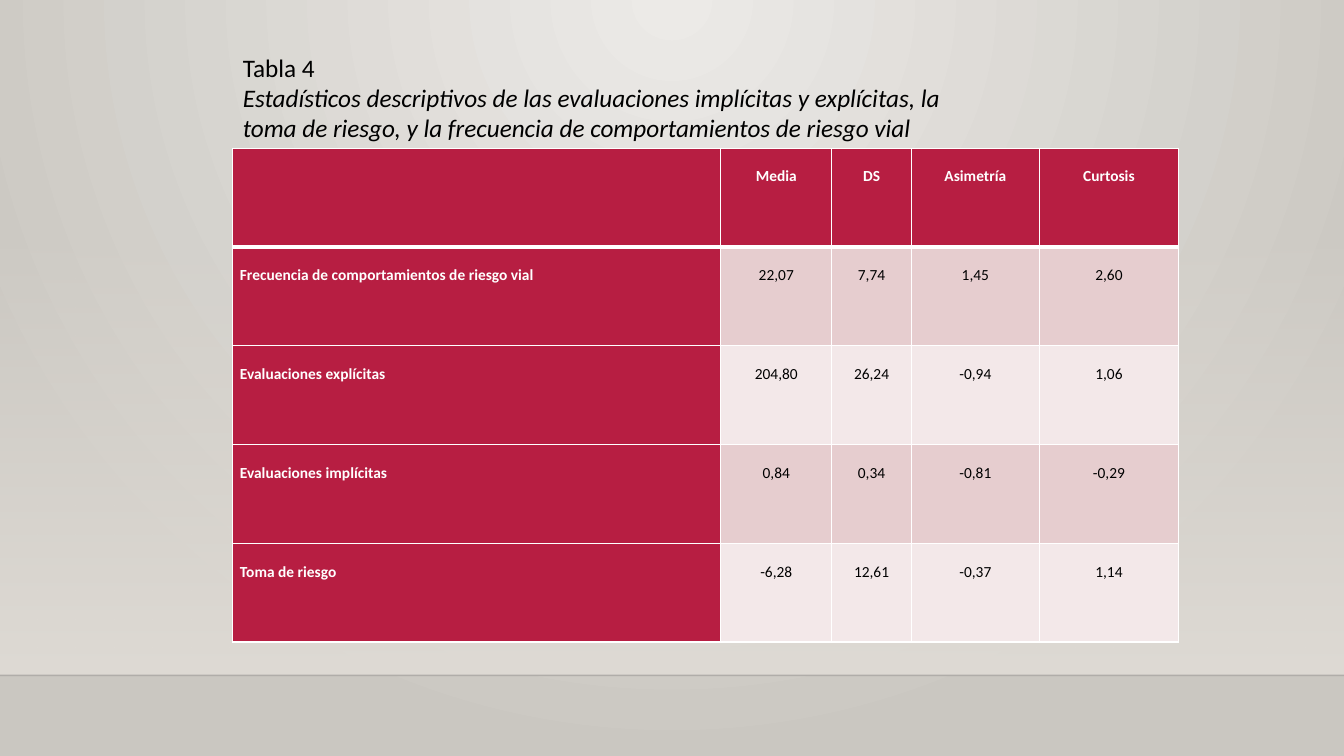
from typing import NamedTuple

from lxml import etree
from pptx import Presentation
from pptx.dml.color import RGBColor
from pptx.enum.shapes import MSO_CONNECTOR, MSO_SHAPE
from pptx.enum.text import MSO_ANCHOR, MSO_AUTO_SIZE, PP_ALIGN
from pptx.oxml.ns import qn
from pptx.util import Inches, Pt

CENTER, LEFT = PP_ALIGN.CENTER, PP_ALIGN.LEFT
MIDDLE = MSO_ANCHOR.MIDDLE
GROW = MSO_AUTO_SIZE.SHAPE_TO_FIT_TEXT
RECTANGLE = MSO_SHAPE.RECTANGLE
STRAIGHT = MSO_CONNECTOR.STRAIGHT

FONT = "Calibri"
CRIMSON, WHITE, BLACK = "B71E42", "FFFFFF", "000000"
BANDS = ("E6CDCF", "F3E8E9")
SLIDE_WIDTH, SLIDE_HEIGHT = 13.33, 7.5
FLOOR_TOP, WALL_TOP = 6.7, 2.21
COLUMN_WIDTHS = (4.84, 1.1, 0.79, 1.27, 1.38)
ROW_HEIGHT = 0.98
TITLE = "Tabla 4"
SUBTITLE = (
    "Estadísticos descriptivos de las evaluaciones implícitas y explícitas, "
    "la toma de riesgo, y la frecuencia de comportamientos de riesgo vial"
)


class Measure(NamedTuple):
    label: str
    mean: str
    deviation: str
    skewness: str
    kurtosis: str


ROWS = (
    Measure("", "Media", "DS", "Asimetría", "Curtosis"),
    Measure("Frecuencia de comportamientos de riesgo vial", "22,07", "7,74", "1,45", "2,60"),
    Measure("Evaluaciones explícitas", "204,80", "26,24", "-0,94", "1,06"),
    Measure("Evaluaciones implícitas", "0,84", "0,34", "-0,81", "-0,29"),
    Measure("Toma de riesgo", "-6,28", "12,61", "-0,37", "1,14"),
)


def color(value: str) -> RGBColor:
    return RGBColor.from_string(value)


def set_gradient(fill, start: str, end: str) -> None:
    fill.gradient()
    for stop, value in zip(fill.gradient_stops, (start, end)):
        stop.color.rgb = color(value)


def set_alpha(color_element, percent: int) -> None:
    etree.SubElement(color_element, qn("a:alpha"), val=str(percent * 1000))


def paint_background(page) -> None:
    set_gradient(page.background.fill, "ECEAE7", "CAC7C1")
    gradient = next(page.element.iter(qn("a:gradFill")))
    gradient.remove(gradient.find(qn("a:lin")))
    circle = etree.SubElement(gradient, qn("a:path"), path="circle")
    etree.SubElement(circle, qn("a:fillToRect"), l="43000", t="0", r="43000", b="100000")


def add_wall(page) -> None:
    """Draw the fading wall and the thin line where it meets the floor."""
    wall = page.shapes.add_shape(
        RECTANGLE, 0, Inches(WALL_TOP), Inches(SLIDE_WIDTH), Inches(FLOOR_TOP - WALL_TOP)
    )
    wall.shadow.inherit = False
    wall.line.fill.background()
    set_gradient(wall.fill, "DFDBD5", "DFDBD5")
    wall.fill.gradient_angle = 270
    set_alpha(next(wall.element.spPr.iter(qn("a:srgbClr"))), 0)

    edge = page.shapes.add_connector(
        STRAIGHT, 0, Inches(FLOOR_TOP), Inches(SLIDE_WIDTH), Inches(FLOOR_TOP)
    )
    edge.line.width = Pt(1)
    edge.line.color.rgb = color("000001")
    properties = edge.element.spPr
    set_alpha(next(properties.iter(qn("a:srgbClr"))), 20)
    etree.SubElement(properties, qn("a:effectLst"))


def set_borders(cell, top: float, bottom: float) -> None:
    """Put white borders before the cell fill, as the schema orders them."""
    properties = cell._tc.get_or_add_tcPr()
    widths = {"a:lnL": 1, "a:lnR": 1, "a:lnT": top, "a:lnB": bottom}
    for index, (tag, width) in enumerate(widths.items()):
        border = etree.Element(qn(tag), w=str(Pt(width)))
        solid = etree.SubElement(border, qn("a:solidFill"))
        etree.SubElement(solid, qn("a:srgbClr"), val=WHITE)
        properties.insert(index, border)


def format_font(font, size: float, value: str, bold: bool = False, italic: bool = False) -> None:
    font.name = FONT
    font.size = Pt(size)
    font.color.rgb = color(value)
    font.bold = bold
    font.italic = italic


def fill_cell(cell, text: str, row: int, column: int) -> None:
    heading = row == 0 or column == 0
    cell.fill.solid()
    cell.fill.fore_color.rgb = color(CRIMSON if heading else BANDS[(row - 1) % 2])
    set_borders(cell, top=3 if row == 1 else 1, bottom=3 if row == 0 else 1)
    cell.margin_left = cell.margin_right = Inches(0.07)
    cell.margin_top = cell.margin_bottom = 0
    cell.text_frame.text = text
    para = cell.text_frame.paragraphs[0]
    para.alignment = CENTER if column else LEFT
    para.line_spacing = 2.0
    format_font(para.font, 11, WHITE if heading else BLACK, bold=heading)
    for span in para.runs:
        format_font(span.font, 11, WHITE if heading else BLACK, bold=heading)


def add_statistics(page) -> None:
    frame = page.shapes.add_table(
        len(ROWS), len(COLUMN_WIDTHS), Inches(2.31), Inches(1.47),
        Inches(sum(COLUMN_WIDTHS)), Inches(ROW_HEIGHT * len(ROWS)),
    )
    table = frame.table
    for table_column, width in zip(table.columns, COLUMN_WIDTHS):
        table_column.width = Inches(width)
    for row, measure in enumerate(ROWS):
        table.rows[row].height = Inches(ROW_HEIGHT)
        for column, text in enumerate(measure):
            fill_cell(table.cell(row, column), text, row, column)


def add_caption(page) -> None:
    box = page.shapes.add_textbox(Inches(2.31), Inches(0.46), Inches(7.44), Inches(1.01))
    frame = box.text_frame
    frame.word_wrap = True
    frame.auto_size = GROW
    frame.vertical_anchor = MIDDLE
    frame.text = f"{TITLE}\n{SUBTITLE}"
    for para, italic in zip(frame.paragraphs, (False, True)):
        format_font(para.runs[0].font, 18, BLACK, italic=italic)


def main() -> None:
    deck = Presentation()
    deck.slide_width = Inches(SLIDE_WIDTH)
    deck.slide_height = Inches(SLIDE_HEIGHT)
    page = deck.slides.add_slide(deck.slide_layouts[6])
    paint_background(page)
    add_wall(page)
    add_statistics(page)
    add_caption(page)
    deck.save("out.pptx")


if __name__ == "__main__":
    main()
